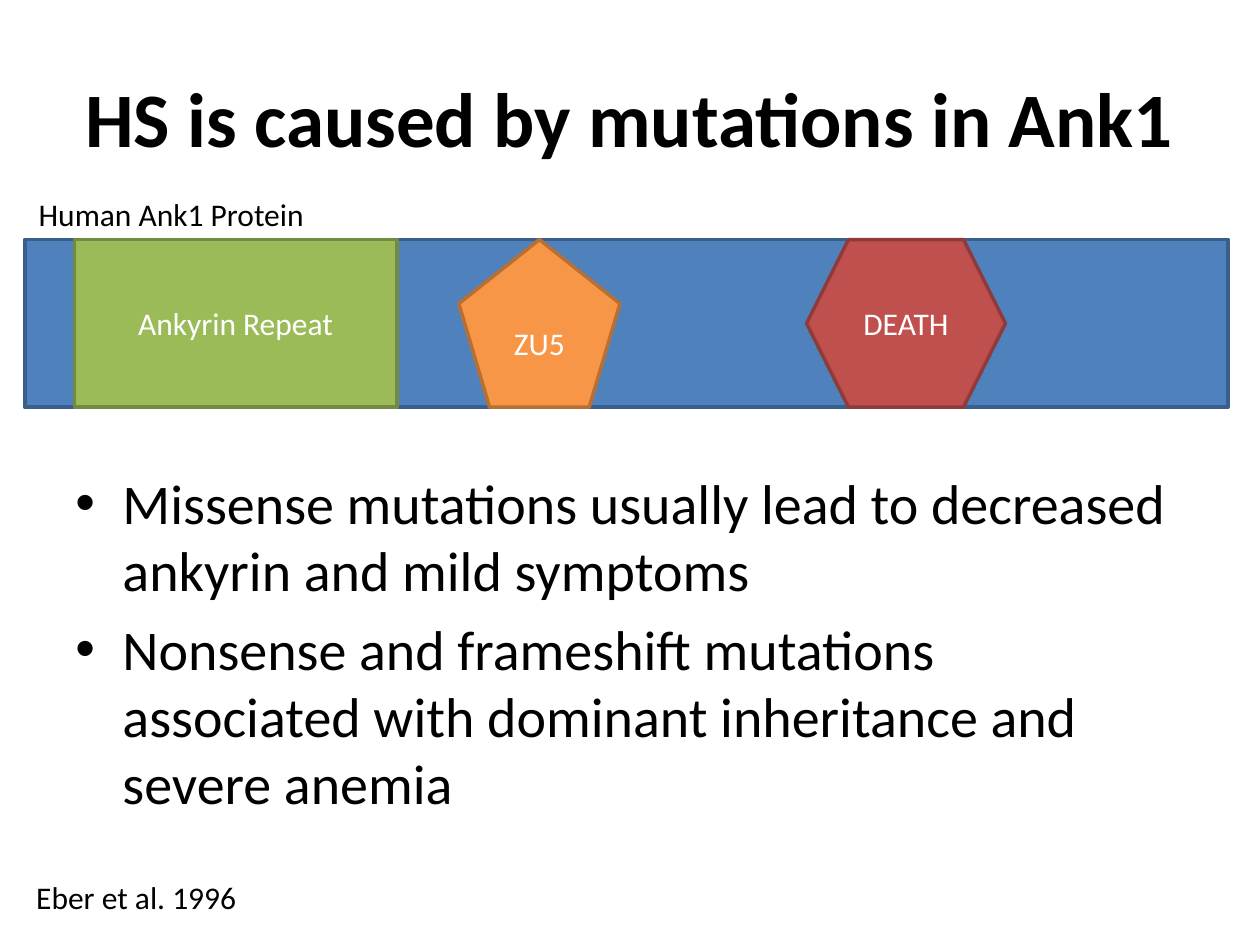
from lxml.etree import SubElement
from pptx import Presentation
from pptx.dml.color import RGBColor
from pptx.enum.shapes import MSO_SHAPE
from pptx.enum.text import MSO_ANCHOR, PP_ALIGN
from pptx.oxml.ns import qn
from pptx.util import Cm, Pt

BLACK = RGBColor(0x00, 0x00, 0x00)
WHITE = RGBColor(0xFF, 0xFF, 0xFF)
BLUE, BLUE_EDGE = RGBColor(0x4F, 0x81, 0xBD), RGBColor(0x3A, 0x5F, 0x8C)
GREEN, GREEN_EDGE = RGBColor(0x9B, 0xBB, 0x59), RGBColor(0x73, 0x8A, 0x42)
ORANGE, ORANGE_EDGE = RGBColor(0xF7, 0x96, 0x46), RGBColor(0xB7, 0x6F, 0x34)
RED, RED_EDGE = RGBColor(0xC0, 0x50, 0x4D), RGBColor(0x8E, 0x3B, 0x39)

# Content (lengths in cm)
TITLE = "HS is caused by mutations in Ank1"
BULLETS = [
    "Missense mutations usually lead to decreased ankyrin and mild symptoms",
    "Nonsense and frameshift mutations associated with dominant inheritance and severe anemia",
]
PROTEIN_LABEL = "Human Ank1 Protein"
CITATION = "Eber et al. 1996"
BAR_TOP, BAR_HEIGHT = 4.83, 3.38
# Protein bar first, then its domains: text, preset, left, width, fill, line
PROTEIN_PARTS = [
    ("", MSO_SHAPE.RECTANGLE, 0.5, 24.26, BLUE, BLUE_EDGE),
    ("Ankyrin Repeat", MSO_SHAPE.RECTANGLE, 1.5, 6.5, GREEN, GREEN_EDGE),
    ("ZU5", MSO_SHAPE.REGULAR_PENTAGON, 9.25, 3.25, ORANGE, ORANGE_EDGE),
    ("DEATH", MSO_SHAPE.HEXAGON, 16.26, 4.01, RED, RED_EDGE),
]


def add_run(p, text, size, color=BLACK, bold=False):
    r = p.add_run()
    r.text = text
    r.font.name = "Calibri"
    r.font.size = Pt(size)
    r.font.bold = bold
    r.font.color.rgb = color


def add_text(shapes, box, lines, size, bold=False):
    tf = shapes.add_textbox(*map(Cm, box)).text_frame
    tf.word_wrap = True
    for i, line in enumerate(lines):
        p = tf.paragraphs[0] if i == 0 else tf.add_paragraph()
        add_run(p, line, size, bold=bold)
    return tf


def add_bullet(p):
    pPr = p._p.get_or_add_pPr()
    pPr.set("marL", str(Cm(0.95)))
    pPr.set("indent", str(-Cm(0.95)))
    SubElement(pPr, qn("a:buFont"), typeface="Arial")
    SubElement(pPr, qn("a:buChar"), char="•")


def add_part(shapes, text, preset, left, width, fill, line):
    s = shapes.add_shape(preset, Cm(left), Cm(BAR_TOP), Cm(width), Cm(BAR_HEIGHT))
    s.shadow.inherit = False
    s.fill.solid()
    s.fill.fore_color.rgb = fill
    s.line.color.rgb = line
    s.line.width = Pt(2)
    if text:
        tf = s.text_frame
        tf.vertical_anchor = MSO_ANCHOR.MIDDLE
        p = tf.paragraphs[0]
        p.alignment = PP_ALIGN.CENTER
        add_run(p, text, 18, WHITE)


def main():
    prs = Presentation()
    prs.slide_width, prs.slide_height = Cm(25.4), Cm(19.05)
    shapes = prs.slides.add_slide(prs.slide_layouts[6]).shapes

    # Title
    tf = add_text(shapes, (1.27, 0.76, 22.86, 3.18), [TITLE], 44, bold=True)
    tf.vertical_anchor = MSO_ANCHOR.MIDDLE
    tf.paragraphs[0].alignment = PP_ALIGN.CENTER

    # Bullets
    tf = add_text(shapes, (1.27, 9.32, 22.86, 7.7), BULLETS, 32)
    for p in tf.paragraphs:
        p.space_before = Pt(6.4)
        add_bullet(p)

    # Protein diagram
    group = shapes.add_group_shape()
    for part in PROTEIN_PARTS:
        add_part(group.shapes, *part)

    # Citation and diagram label
    add_text(shapes, (0.48, 17.58, 6.5, 1.02), [CITATION], 18)
    add_text(shapes, (0.53, 3.81, 7.62, 1.02), [PROTEIN_LABEL], 18)

    prs.save("out.pptx")


if __name__ == "__main__":
    main()
